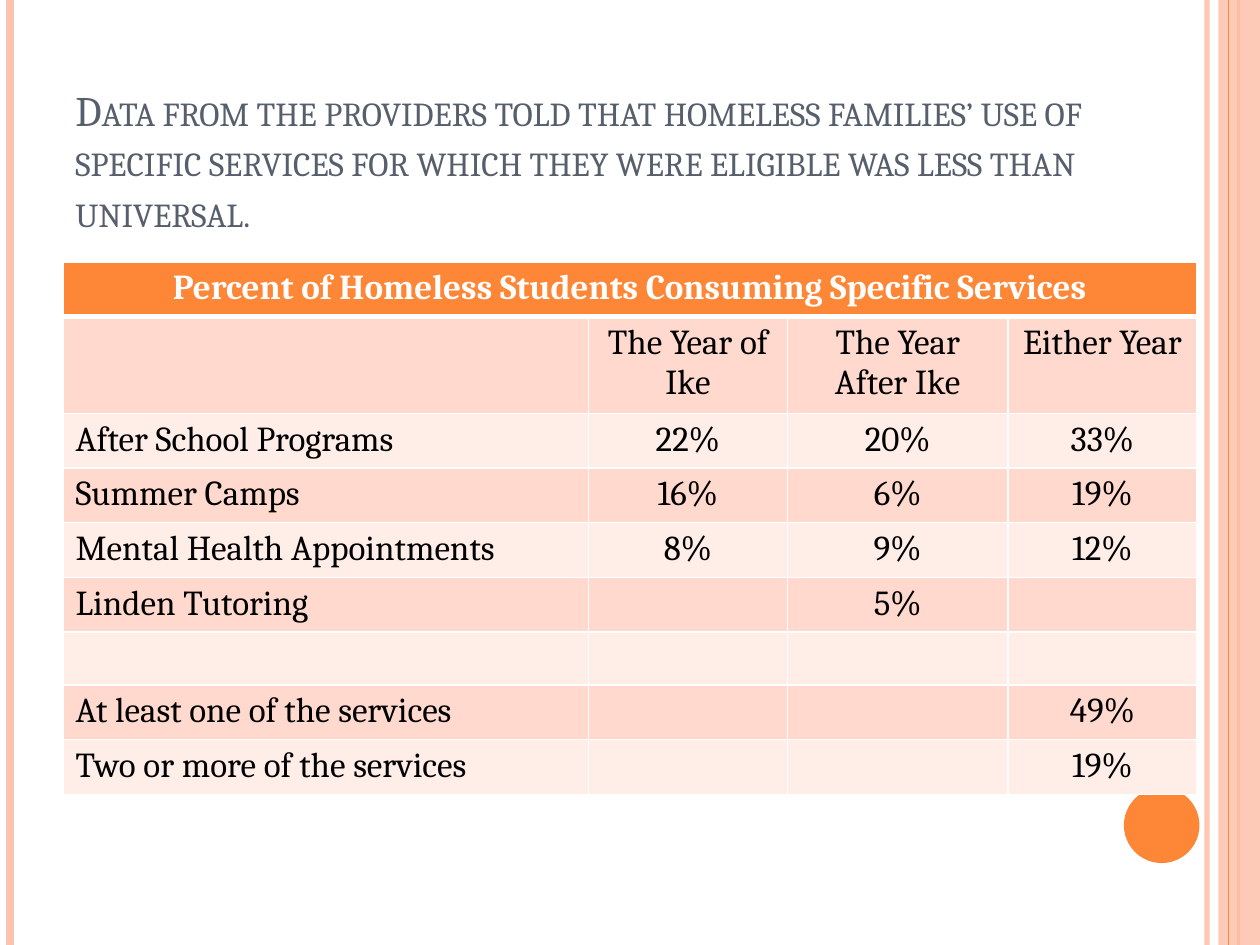
from dataclasses import dataclass
from typing import Optional

import pptx
import pptx.dml.color
import pptx.enum.shapes
import pptx.enum.text
import pptx.oxml
import pptx.oxml.ns
import pptx.util

Inches = pptx.util.Inches
Pt = pptx.util.Pt
RGBColor = pptx.dml.color.RGBColor
Align = pptx.enum.text.PP_ALIGN
Shape = pptx.enum.shapes.MSO_SHAPE
qn = pptx.oxml.ns.qn

ORANGE = RGBColor(0xFE, 0x86, 0x37)
PEACH = RGBColor(0xFE, 0xC3, 0xAE)
SLATE = RGBColor(0x57, 0x5F, 0x6D)
WHITE = RGBColor(0xFF, 0xFF, 0xFF)
BLACK = RGBColor(0x00, 0x00, 0x00)
BANDS = (RGBColor(0xFF, 0xD9, 0xCE), RGBColor(0xFF, 0xED, 0xE8))
FONT = "Cambria"


@dataclass
class Stripe:
    x: float
    color: RGBColor
    width: float
    alpha: Optional[int] = None


@dataclass
class Service:
    label: str = ""
    ike_year: str = ""
    year_after: str = ""
    either_year: str = ""

    def values(self) -> tuple[str, ...]:
        return self.label, self.ike_year, self.year_after, self.either_year


LEFT_STRIPES = [Stripe(9.58, PEACH, 3, 93), Stripe(0.08, PEACH, 4.5), Stripe(9.83, ORANGE, 1.5)]
BAND_STRIPE = Stripe(9.75, ORANGE, 0.75)
COLUMN_WIDTHS = (4.17, 1.58, 1.75, 1.5)
TITLE = (
    "Data from the providers told that homeless families’ use of specific services "
    "for which they were eligible was less than universal."
)
HEADING = "Percent of Homeless Students Consuming Specific Services"
SERVICES = [
    Service("", "The Year of Ike", "The Year After Ike", "Either Year"),
    Service("After School Programs", "22%", "20%", "33%"),
    Service("Summer Camps", "16%", "6%", "19%"),
    Service("Mental Health Appointments", "8%", "9%", "12%"),
    Service("Linden Tutoring", "", "5%"),
    Service(),
    Service("At least one of the services", either_year="49%"),
    Service("Two or more of the services", either_year="19%"),
]
ROW_HEIGHTS = [0.41, 0.74] + [0.42] * (len(SERVICES) - 1)


def set_alpha(fill_owner, percent: int) -> None:
    color = next(fill_owner.iter(qn("a:srgbClr")))
    color.append(pptx.oxml.parse_xml(
        f'<a:alpha {pptx.oxml.ns.nsdecls("a")} val="{percent * 1000}"/>'))


def draw_stripe(slide, stripe: Stripe) -> None:
    line = slide.shapes.add_connector(
        pptx.enum.shapes.MSO_CONNECTOR.STRAIGHT,
        Inches(stripe.x), Inches(0), Inches(stripe.x), Inches(7.5))
    line.line.color.rgb = stripe.color
    line.line.width = Pt(stripe.width)
    properties = line._element.spPr
    if stripe.alpha is not None:
        set_alpha(properties, stripe.alpha)
    properties.append(pptx.oxml.parse_xml(
        f'<a:effectLst {pptx.oxml.ns.nsdecls("a")}/>'))


def draw_solid(slide, kind, left: float, top: float, width: float, height: float,
               color: RGBColor, alpha: Optional[int] = None) -> None:
    solid = slide.shapes.add_shape(
        kind, Inches(left), Inches(top), Inches(width), Inches(height))
    solid.shadow.inherit = False
    solid.fill.solid()
    solid.fill.fore_color.rgb = color
    solid.line.fill.background()
    if alpha is not None:
        set_alpha(solid._element.spPr, alpha)


def add_run(paragraph, text: str, size: float, color: RGBColor, bold: bool = False):
    run = paragraph.add_run()
    run.text = text
    run.font.name = FONT
    run.font.size = Pt(size)
    run.font.color.rgb = color
    run.font.bold = bold
    return run


def draw_title(slide) -> None:
    title = slide.shapes.add_textbox(Inches(0.5), Inches(0.5), Inches(9), Inches(1.42))
    frame = title.text_frame
    frame.word_wrap = True
    frame.vertical_anchor = pptx.enum.text.MSO_ANCHOR.BOTTOM
    run = add_run(frame.paragraphs[0], TITLE, 24, SLATE)
    run.font._element.set("cap", "small")


def style_cell(cell, fill: RGBColor, top: float = 1, bottom: float = 1) -> None:
    cell.fill.solid()
    cell.fill.fore_color.rgb = fill
    properties = cell._tc.get_or_add_tcPr()
    borders = (("lnL", 1), ("lnR", 1), ("lnT", top), ("lnB", bottom))
    for position, (side, width) in enumerate(borders):
        properties.insert(position, pptx.oxml.parse_xml(
            f'<a:{side} {pptx.oxml.ns.nsdecls("a")} w="{Pt(width)}">'
            f'<a:solidFill><a:srgbClr val="{WHITE}"/></a:solidFill></a:{side}>'))


def fill_cell(cell, text: str, color: RGBColor, centred: bool, bold: bool = False) -> None:
    paragraph = cell.text_frame.paragraphs[0]
    if centred:
        paragraph.alignment = Align.CENTER
    if text:
        add_run(paragraph, text, 20, color, bold)


def draw_table(slide) -> None:
    table = slide.shapes.add_table(
        len(ROW_HEIGHTS), len(COLUMN_WIDTHS), Inches(0.5), Inches(2.08),
        Inches(sum(COLUMN_WIDTHS)), Inches(sum(ROW_HEIGHTS))).table
    for column, width in zip(table.columns, COLUMN_WIDTHS):
        column.width = Inches(width)
    for row, height in zip(table.rows, ROW_HEIGHTS):
        row.height = Inches(height)

    for cell in table.rows[0].cells:
        style_cell(cell, ORANGE, bottom=3)
    heading = table.cell(0, 0)
    heading.merge(table.cell(0, len(COLUMN_WIDTHS) - 1))
    fill_cell(heading, HEADING, WHITE, centred=True, bold=True)

    for index, service in enumerate(SERVICES):
        for column, text in enumerate(service.values()):
            cell = table.cell(index + 1, column)
            style_cell(cell, BANDS[index % 2], top=3 if index == 0 else 1)
            fill_cell(cell, text, BLACK, centred=column > 0)


def main() -> None:
    presentation = pptx.Presentation()
    presentation.slide_width = Inches(10)
    presentation.slide_height = Inches(7.5)
    slide = presentation.slides.add_slide(presentation.slide_layouts[6])
    for stripe in LEFT_STRIPES:
        draw_stripe(slide, stripe)
    draw_solid(slide, Shape.RECTANGLE, 9.67, 0, 0.33, 7.5, PEACH, 87)
    draw_stripe(slide, BAND_STRIPE)
    draw_solid(slide, Shape.OVAL, 8.92, 6.25, 0.6, 0.6, ORANGE)
    draw_title(slide)
    draw_table(slide)
    presentation.save("out.pptx")


if __name__ == "__main__":
    main()
